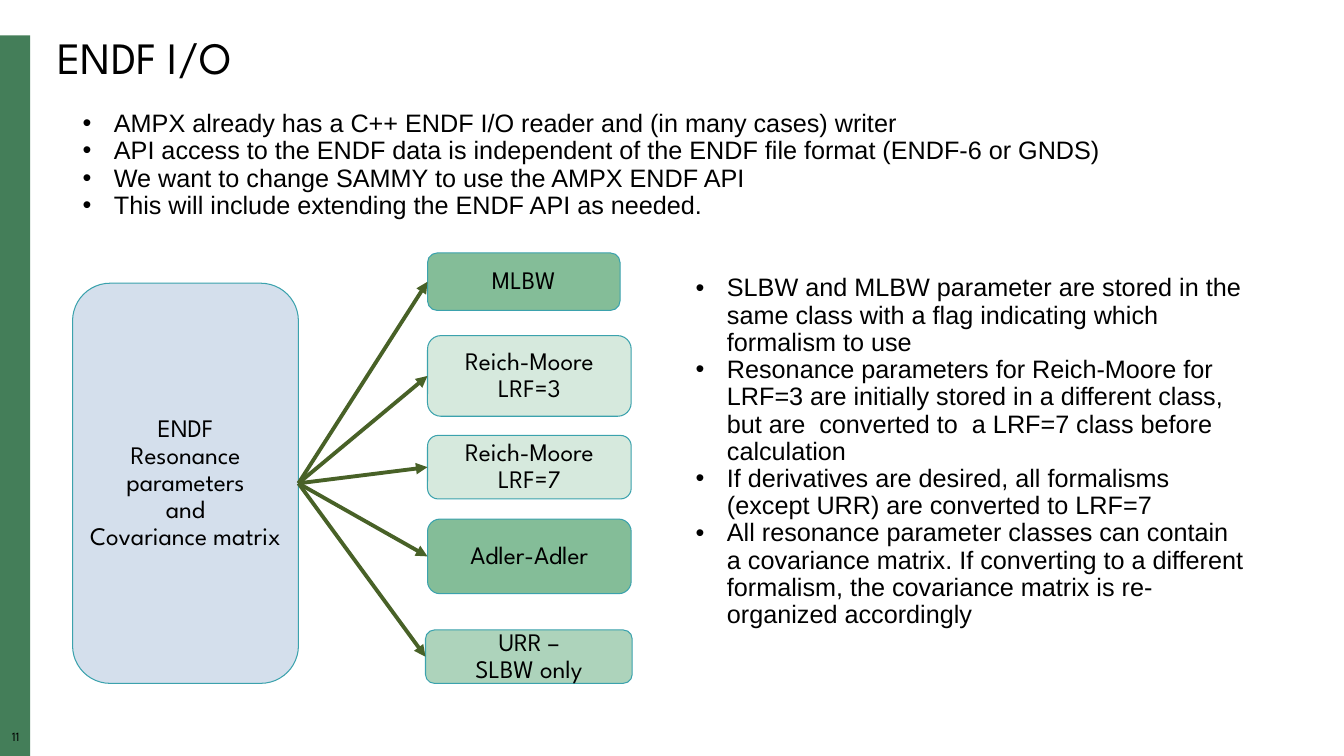
"""Build the ENDF I/O slide with its resonance parameter diagram."""
from dataclasses import dataclass

import lxml.etree
import pptx
import pptx.dml.color
import pptx.enum.shapes
import pptx.enum.text
import pptx.oxml.ns
import pptx.util

Inches = pptx.util.Inches
Pt = pptx.util.Pt
qn = pptx.oxml.ns.qn
Align = pptx.enum.text.PP_ALIGN
Anchor = pptx.enum.text.MSO_ANCHOR
Shape = pptx.enum.shapes.MSO_SHAPE

HEX = {
    "bar": "447E59", "text": "000000", "edge": "3BA2AD", "arrow": "486127",
    "source": "BCCEE2", "deep": "84BD98", "pale": "D6E9DD", "mid": "ADD3BB",
}
HEAD = "League Spartan"
BODY = "Arial"


@dataclass
class Box:
    """A rounded box of the diagram."""
    text: str
    left: float
    top: float
    width: float
    height: float
    fill: str
    alpha: int = 100


@dataclass
class Points:
    """A bulleted list and its place."""
    left: float
    top: float
    width: float
    height: float
    items: list[str]


SOURCE = Box("ENDF\nResonance parameters\nand\nCovariance matrix",
             0.72, 2.81, 2.24, 3.97, "source", 64)
FORMS = [
    Box("MLBW", 4.24, 2.51, 1.91, 0.57, "deep"),
    Box("Reich-Moore LRF=3", 4.24, 3.33, 2.02, 0.8, "pale"),
    Box("Reich-Moore LRF=7", 4.24, 4.32, 2.02, 0.63, "pale"),
    Box("Adler-Adler", 4.24, 5.15, 2.02, 0.74, "deep"),
    Box("URR –\nSLBW only", 4.22, 6.25, 2.05, 0.53, "mid"),
]
LISTS = [
    Points(0.72, 1.05, 11.84, 1.74, [
        "AMPX already has a C++ ENDF I/O reader and (in many cases) writer",
        "API access to the ENDF data is independent of the ENDF file format (ENDF-6 or GNDS)",
        "We want to change SAMMY to use the AMPX ENDF API",
        "This will include extending the ENDF API as needed.",
    ]),
    Points(6.8, 2.68, 5.67, 3.65, [
        "SLBW and MLBW parameter are stored in the same class with a flag "
        "indicating which formalism to use",
        "Resonance parameters for Reich-Moore for LRF=3 are initially stored in a "
        "different class, but are  converted to  a LRF=7 class before calculation",
        "If derivatives are desired, all formalisms (except URR) are converted to LRF=7",
        "All resonance parameter classes can contain a covariance matrix. If converting "
        "to a different formalism, the covariance matrix is re-organized accordingly",
    ]),
]


def tint(name: str) -> pptx.dml.color.RGBColor:
    """Return the named colour."""
    return pptx.dml.color.RGBColor.from_string(HEX[name])


def place(shape, left: float, top: float, width: float, height: float) -> None:
    """Move and size a shape, in inches."""
    shape.left, shape.top = Inches(left), Inches(top)
    shape.width, shape.height = Inches(width), Inches(height)


def style(frame, font: str, size: int, align: Align) -> None:
    """Format every paragraph and run of a text frame."""
    frame.word_wrap = True
    for para in frame.paragraphs:
        para.alignment = align
        para.line_spacing = 0.9
        para.space_before = para.space_after = Pt(0)
        for run in para.runs:
            run.font.name = font
            run.font.size = Pt(size)
            run.font.color.rgb = tint("text")


def inset(frame, gap: float) -> None:
    """Set all four margins of a text frame, in inches."""
    frame.margin_left = frame.margin_right = Inches(gap)
    frame.margin_top = frame.margin_bottom = Inches(gap)


def add_list(holder, points: Points) -> None:
    """Fill a body placeholder with bullets."""
    place(holder, points.left, points.top, points.width, points.height)
    frame = holder.text_frame
    frame.text = "\n".join(points.items)
    for para in frame.paragraphs:
        props = para._p.get_or_add_pPr()
        props.set("marL", str(Inches(0.31)))
        props.set("indent", str(Inches(-0.31)))
        lxml.etree.SubElement(props, qn("a:buFont")).set("typeface", BODY)
        lxml.etree.SubElement(props, qn("a:buChar")).set("char", "•")
    style(frame, BODY, 18, Align.LEFT)
    frame.vertical_anchor = Anchor.TOP
    frame.auto_size = pptx.enum.text.MSO_AUTO_SIZE.SHAPE_TO_FIT_TEXT


def add_box(slide, box: Box):
    """Draw a rounded box with centred text."""
    shape = slide.shapes.add_shape(
        Shape.ROUNDED_RECTANGLE, Inches(box.left), Inches(box.top),
        Inches(box.width), Inches(box.height))
    shape.shadow.inherit = False
    shape.fill.solid()
    shape.fill.fore_color.rgb = tint(box.fill)
    if box.alpha < 100:
        color = shape._element.spPr.find(qn("a:solidFill")).find(qn("a:srgbClr"))
        lxml.etree.SubElement(color, qn("a:alpha")).set("val", str(box.alpha * 1000))
    shape.line.color.rgb = tint("edge")
    shape.line.width = Pt(0.75)
    frame = shape.text_frame
    frame.text = box.text
    frame.vertical_anchor = Anchor.MIDDLE
    inset(frame, 0.05)
    style(frame, HEAD, 18, Align.CENTER)
    return shape


def add_arrow(slide, start, end) -> None:
    """Link the right side of one box to the left side of another."""
    arrow = slide.shapes.add_connector(
        pptx.enum.shapes.MSO_CONNECTOR.STRAIGHT, 0, 0, 0, 0)
    arrow.begin_connect(start, 3)
    arrow.end_connect(end, 1)
    arrow.line.color.rgb = tint("arrow")
    arrow.line.width = Pt(2.75)
    line = arrow.line._get_or_add_ln()
    lxml.etree.SubElement(line, qn("a:tailEnd")).set("type", "triangle")
    lxml.etree.SubElement(arrow._element.spPr, qn("a:effectLst"))


def add_edge(slide) -> None:
    """Draw the side bar and the slide number."""
    bar = slide.shapes.add_shape(
        Shape.RECTANGLE, 0, Inches(0.35), Inches(0.3), Inches(7.15))
    bar.shadow.inherit = False
    bar.fill.solid()
    bar.fill.fore_color.rgb = tint("bar")
    bar.line.fill.background()
    label = slide.shapes.add_textbox(0, Inches(7.25), Inches(0.31), Inches(0.17))
    label.text_frame.text = "11"
    inset(label.text_frame, 0)
    style(label.text_frame, HEAD, 9, Align.CENTER)


def main() -> None:
    """Build and save the slide."""
    deck = pptx.Presentation()
    deck.slide_width, deck.slide_height = Inches(13.33), Inches(7.5)
    slide = deck.slides.add_slide(deck.slide_layouts[3])
    title, *bodies = slide.placeholders
    place(title, 0.47, 0.3, 12.5, 0.59)
    title.text_frame.text = "ENDF I/O"
    title.text_frame.vertical_anchor = Anchor.MIDDLE
    style(title.text_frame, HEAD, 32, Align.LEFT)
    for holder, points in zip(bodies, LISTS):
        add_list(holder, points)
    add_edge(slide)
    source = add_box(slide, SOURCE)
    for form in [add_box(slide, box) for box in FORMS]:
        add_arrow(slide, source, form)
    deck.save("out.pptx")


if __name__ == "__main__":
    main()
